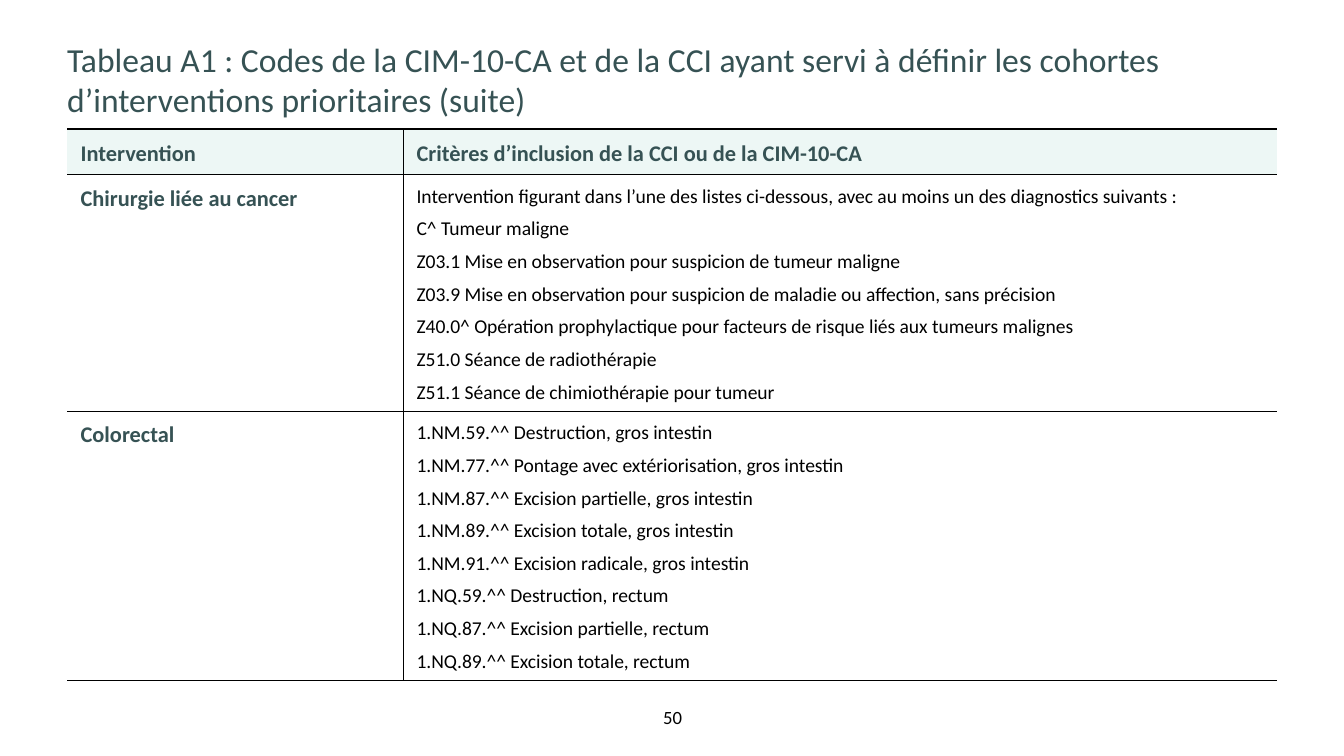
from lxml import etree
from pptx import Presentation, util as u
from pptx.dml import color
from pptx.enum import text
from pptx.oxml import ns

INK, HEADING, TINT, WHITE = "000000", "365254", "EDF7F5", "FFFFFF"


def style(paragraph, size, hex_color, bold=False):
    font = paragraph.font
    font.name, font.size, font.bold = "Calibri", u.Pt(size), bold
    font.color.rgb = color.RGBColor.from_string(hex_color)


def border(cell, side, width):
    line = etree.SubElement(cell._tc.get_or_add_tcPr(), ns.qn("a:ln" + side), w=str(u.Pt(width)))
    if width:
        fill = etree.SubElement(line, ns.qn("a:solidFill"))
        etree.SubElement(fill, ns.qn("a:srgbClr"), val=INK)
    else:
        etree.SubElement(line, ns.qn("a:noFill"))


prs = Presentation()
prs.slide_width = u.Inches(10)
prs.slide_height = prs.slide_width * 9 // 16
margin = prs.slide_width // 20
content_width = prs.slide_width - 2 * margin
slide = prs.slides.add_slide(prs.slide_layouts[5])

title = slide.shapes.title
title.left, title.top, title.width, title.height = margin, u.Inches(0.29), content_width, u.Inches(0.61)
title.text = "Tableau A1 : Codes de la CIM-10-CA et de la CCI ayant servi à définir les cohortes d’interventions prioritaires (suite)"
title.text_frame.vertical_anchor = text.MSO_ANCHOR.TOP
title.text_frame.auto_size = text.MSO_AUTO_SIZE.NONE
title.text_frame.paragraphs[0].alignment = text.PP_ALIGN.LEFT
style(title.text_frame.paragraphs[0], 18, HEADING)

page = slide.shapes.add_textbox(u.Inches(4.69), u.Inches(5.25), u.Inches(0.63), u.Inches(0.17))
page.text_frame.text = "50"
page.text_frame.vertical_anchor = text.MSO_ANCHOR.MIDDLE
page.text_frame.paragraphs[0].alignment = text.PP_ALIGN.CENTER
style(page.text_frame.paragraphs[0], 10, INK)

for frame in (title.text_frame, page.text_frame):
    frame.word_wrap = True
    frame.margin_left = frame.margin_top = frame.margin_right = frame.margin_bottom = 0

criteria = [
    ("Intervention", ["Critères d’inclusion de la CCI ou de la CIM-10-CA"]),
    ("Chirurgie liée au cancer", [
        "Intervention figurant dans l’une des listes ci-dessous, avec au moins un des diagnostics suivants :",
        "C^ Tumeur maligne",
        "Z03.1 Mise en observation pour suspicion de tumeur maligne",
        "Z03.9 Mise en observation pour suspicion de maladie ou affection, sans précision",
        "Z40.0^ Opération prophylactique pour facteurs de risque liés aux tumeurs malignes",
        "Z51.0 Séance de radiothérapie",
        "Z51.1 Séance de chimiothérapie pour tumeur",
    ]),
    ("Colorectal", [
        "1.NM.59.^^ Destruction, gros intestin",
        "1.NM.77.^^ Pontage avec extériorisation, gros intestin",
        "1.NM.87.^^ Excision partielle, gros intestin",
        "1.NM.89.^^ Excision totale, gros intestin",
        "1.NM.91.^^ Excision radicale, gros intestin",
        "1.NQ.59.^^ Destruction, rectum",
        "1.NQ.87.^^ Excision partielle, rectum",
        "1.NQ.89.^^ Excision totale, rectum",
    ]),
]
row_heights = [0.34, 1.76, 2]
table = slide.shapes.add_table(len(criteria), 2, margin, u.Inches(0.96), content_width,
                               u.Inches(sum(row_heights))).table
table.horz_banding = False
table.columns[0].width, table.columns[1].width = u.Inches(2.5), u.Inches(6.5)

for row, (intervention, codes) in enumerate(criteria):
    table.rows[row].height = u.Inches(row_heights[row])
    for column, lines in enumerate(([intervention], codes)):
        cell = table.cell(row, column)
        is_heading = row == 0 or column == 0
        cell.text = "\n".join(lines)
        if row == 0:
            cell.vertical_anchor = text.MSO_ANCHOR.MIDDLE
        for index, paragraph in enumerate(cell.text_frame.paragraphs):
            paragraph.line_spacing = 1.14
            paragraph.space_before = u.Pt(3 if index else 0)
            style(paragraph, 12 if is_heading else 10.5, HEADING if is_heading else INK, is_heading)
        border(cell, "L", 0.5 * column)
        border(cell, "R", 0.5 * (1 - column))
        border(cell, "T", 0.5 if row else 1)
        border(cell, "B", 0.5)
        cell.fill.solid()
        cell.fill.fore_color.rgb = color.RGBColor.from_string(WHITE if row else TINT)

prs.save("out.pptx")
